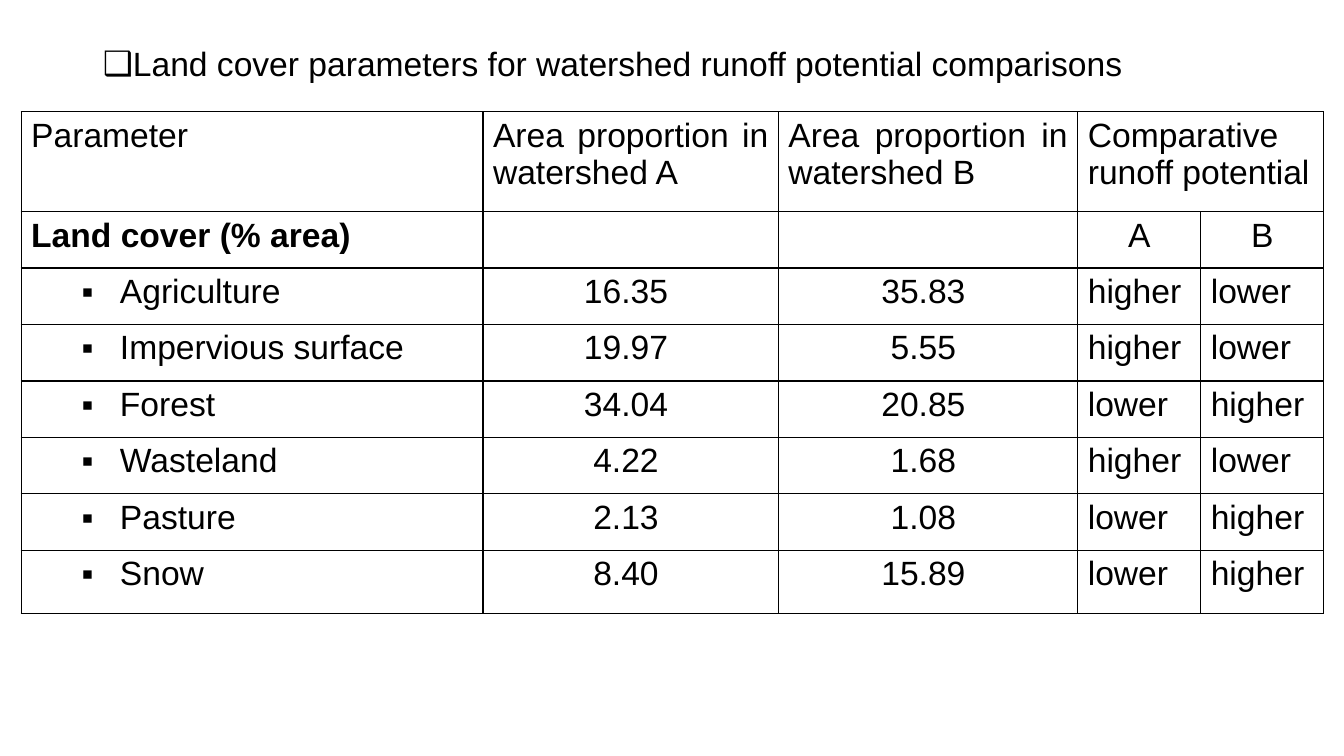
"""Build a slide with a table comparing the land cover of two watersheds."""
from pptx import Presentation
from pptx.dml.color import RGBColor
from pptx.enum.text import MSO_ANCHOR, MSO_AUTO_SIZE, PP_ALIGN
from pptx.oxml import parse_xml
from pptx.oxml.ns import nsdecls
from pptx.util import Pt

HEADING = "Land cover parameters for watershed runoff potential comparisons "
HEADERS = ["Parameter ", "Area proportion in watershed A",
           "Area proportion in watershed B", "Comparative runoff potential"]
SUBHEADERS = ["Land cover (% area)", "", "", "A", "B"]
LAND_COVERS = [
    ("Agriculture ", "16.35 ", "35.83 ", "higher", "lower"),
    ("Impervious surface ", "19.97 ", "5.55 ", "higher", "lower"),
    ("Forest", "34.04 ", "20.85 ", "lower", "higher"),
    ("Wasteland", "4.22 ", "1.68 ", "higher", "lower"),
    ("Pasture", "2.13 ", "1.08 ", "lower", "higher"),
    ("Snow", "8.40 ", "15.89 ", "lower", "higher"),
]
COLUMN_WIDTHS = [458, 293, 297, 122, 122]
ROW_HEIGHTS = [99] + [56] * 6 + [63]
TABLE_LEFT, TABLE_TOP = 21, 111
HEADING_BOX = (92, 18, 1125, 71)
SLIDE_SIZE = (1333, 750)
EMU_PER_PX = 9144
BLACK = RGBColor(0, 0, 0)
WHITE = RGBColor(255, 255, 255)
JUSTIFY, CENTER = PP_ALIGN.JUSTIFY, PP_ALIGN.CENTER


def px(length):
    return length * EMU_PER_PX


def write(frame, text, align=JUSTIFY, bold=False, bullet=None, margin=0,
          indent=0, level=0, spacing=None):
    paragraph = frame.paragraphs[0]
    paragraph.alignment = align
    paragraph.level = level
    if spacing:
        paragraph.line_spacing = spacing
    if bullet:
        properties = paragraph._p.get_or_add_pPr()
        properties.set("marL", str(px(margin)))
        properties.set("indent", str(px(indent)))
        properties.append(parse_xml(f'<a:buFont {nsdecls("a")} typeface="Arial"/>'))
        properties.append(parse_xml(f'<a:buChar {nsdecls("a")} char="{bullet}"/>'))
    run = paragraph.add_run()
    run.text = text
    run.font.name = "Arial"
    run.font.size = Pt(24)
    run.font.bold = bold
    run.font.color.rgb = BLACK


def style_cell(cell):
    for side in ("lnL", "lnR", "lnT", "lnB"):
        cell._tc.get_or_add_tcPr().append(parse_xml(
            f'<a:{side} {nsdecls("a")} w="{Pt(1)}"><a:solidFill>'
            f'<a:srgbClr val="{BLACK}"/></a:solidFill></a:{side}>'))
    cell.fill.solid()
    cell.fill.fore_color.rgb = WHITE


def add_heading(slide):
    heading = slide.shapes.title
    heading.left, heading.top, heading.width, heading.height = map(px, HEADING_BOX)
    frame = heading.text_frame
    frame.word_wrap = True
    frame.auto_size = MSO_AUTO_SIZE.SHAPE_TO_FIT_TEXT
    frame.vertical_anchor = MSO_ANCHOR.TOP
    write(frame, HEADING, bullet="❑", spacing=1.5)


def add_land_cover_table(slide):
    table = slide.shapes.add_table(
        len(ROW_HEIGHTS), len(COLUMN_WIDTHS), px(TABLE_LEFT), px(TABLE_TOP),
        px(sum(COLUMN_WIDTHS)), px(sum(ROW_HEIGHTS))).table
    table.first_row = table.horz_banding = False
    for column, width in zip(table.columns, COLUMN_WIDTHS):
        column.width = px(width)
    for row, height in zip(table.rows, ROW_HEIGHTS):
        row.height = px(height)
    for cell in table.iter_cells():
        style_cell(cell)
    table.cell(0, 3).merge(table.cell(0, 4))

    for column, header in enumerate(HEADERS):
        write(table.cell(0, column).text_frame, header)
    for column, subheader in enumerate(SUBHEADERS):
        if subheader:
            write(table.cell(1, column).text_frame, subheader,
                  align=CENTER if column else JUSTIFY, bold=column == 0)
    for row, (cover, *areas_and_runoff) in enumerate(LAND_COVERS, start=2):
        write(table.cell(row, 0).text_frame, cover, bullet="▪",
              margin=88, indent=-38, level=1)
        for column, value in enumerate(areas_and_runoff, start=1):
            write(table.cell(row, column).text_frame, value,
                  align=CENTER if column < 3 else JUSTIFY)


def main():
    presentation = Presentation()
    presentation.slide_width, presentation.slide_height = map(px, SLIDE_SIZE)
    slide = presentation.slides.add_slide(presentation.slide_layouts[5])
    add_heading(slide)
    add_land_cover_table(slide)
    presentation.save("out.pptx")


if __name__ == "__main__":
    main()
